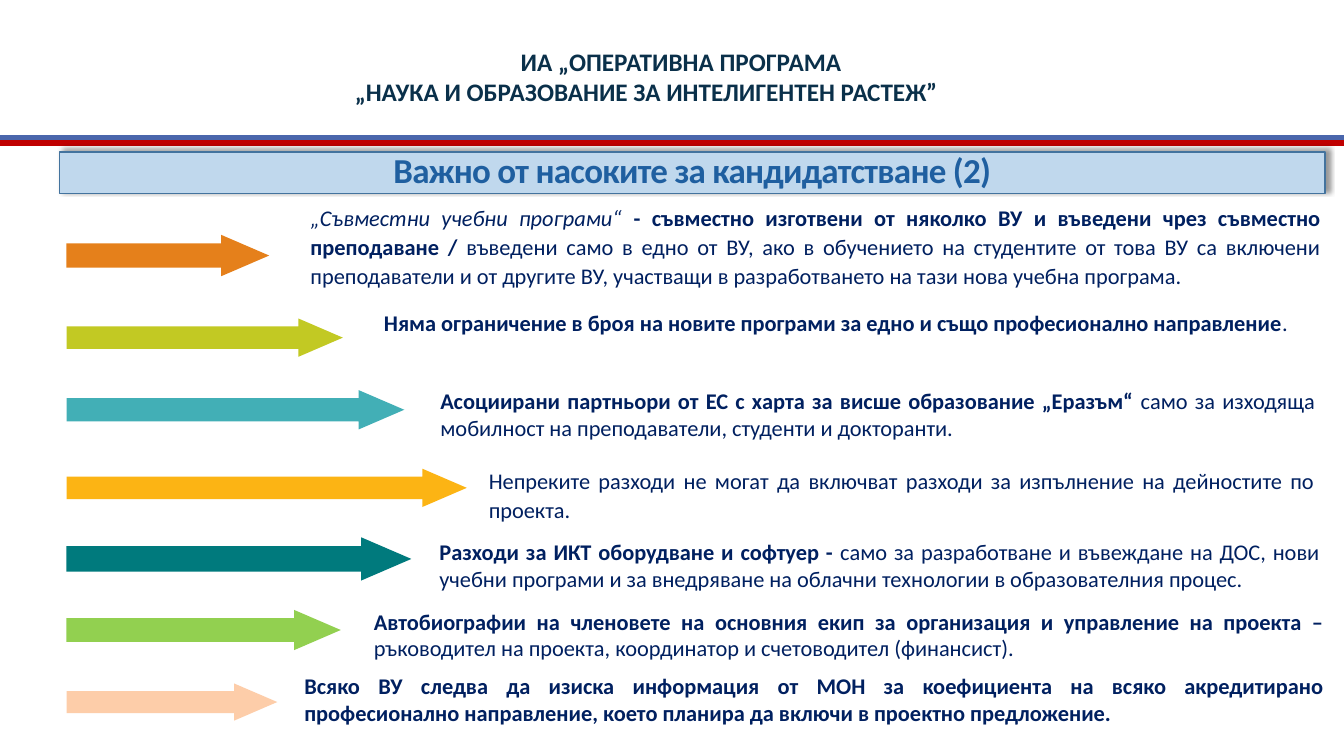
from pptx import Presentation
from pptx.dml.color import RGBColor
from pptx.enum.shapes import MSO_CONNECTOR, MSO_SHAPE
from pptx.enum.text import MSO_ANCHOR, MSO_AUTO_SIZE, PP_ALIGN
from pptx.oxml import parse_xml
from pptx.oxml.ns import nsdecls
from pptx.util import Inches, Pt

THEME = dict(
    font="Calibri", head_size=18, title_size=25, body_size=16,
    head="0A304A", title="1F5FA0", body="002060",
    bar="C0D8ED", bar_line="43739E", rule_blue="4A66AC", rule_red="C00000",
    arrows=["E5801B", "C2C923", "42AFB6", "FCB414", "007A7D", "92D050", "FDCDA9"],
)

prs = Presentation()
prs.slide_width, prs.slide_height = Inches(13.33), Inches(7.5)
s = prs.slides.add_slide(prs.slide_layouts[6])


def box(x, y, w, h):
    """Turn percent shares of the slide into lengths."""
    W, H = prs.slide_width, prs.slide_height
    return [int(share * side / 100) for share, side in zip((x, y, w, h), (W, H, W, H))]


def write(p, text, size, color, bold=False, italic=False, align=PP_ALIGN.LEFT,
          line=None, after=None, spacing=None):
    p.alignment = align
    if line:
        p.line_spacing = line
    if after:
        p.space_after = Pt(after)
    r = p.add_run()
    r.text = text
    f = r.font
    f.name, f.size, f.bold, f.italic = THEME["font"], Pt(size), bold, italic
    f.color.rgb = RGBColor.from_string(color)
    if spacing:
        r._r.get_or_add_rPr().set("spc", str(spacing))


# Double rule under the header
for y, color in [(18.27, THEME["rule_blue"]), (18.93, THEME["rule_red"])]:
    left, top, width, _ = box(0, y, 100, 0)
    ln = s.shapes.add_connector(MSO_CONNECTOR.STRAIGHT, left, top, left + width, top)
    ln.line.color.rgb = RGBColor.from_string(color)
    ln.line.width = Pt(3.75)
    ln._element.spPr.append(parse_xml(f"<a:effectLst {nsdecls('a')}/>"))

# Header
tf = s.shapes.add_textbox(*box(25.66, 5.47, 50.04, 9.47)).text_frame
tf.word_wrap = True
tf.auto_size = MSO_AUTO_SIZE.SHAPE_TO_FIT_TEXT
write(tf.paragraphs[0], "ИА „ОПЕРАТИВНА ПРОГРАМА", THEME["head_size"], THEME["head"],
      bold=True, align=PP_ALIGN.CENTER)
write(tf.add_paragraph(), "„НАУКА И ОБРАЗОВАНИЕ ЗА ИНТЕЛИГЕНТЕН РАСТЕЖ”",
      THEME["head_size"], THEME["head"], bold=True)

# Title bar
sp = s.shapes.add_shape(MSO_SHAPE.RECTANGLE, *box(4.43, 20.13, 94.15, 5.47))
sp.fill.solid()
sp.fill.fore_color.rgb = RGBColor.from_string(THEME["bar"])
sp.line.color.rgb = RGBColor.from_string(THEME["bar_line"])
sp.line.width = Pt(1)
sp._element.spPr.append(parse_xml(
    f'<a:effectLst {nsdecls("a")}><a:outerShdw blurRad="{Pt(4)}" dist="{Pt(3)}" '
    f'dir="{315 * 60000}" algn="bl" rotWithShape="0"><a:srgbClr val="000000">'
    '<a:alpha val="40000"/></a:srgbClr></a:outerShdw></a:effectLst>'))
tf = sp.text_frame
tf.margin_left = tf.margin_right = tf.margin_top = tf.margin_bottom = 0
tf.vertical_anchor = MSO_ANCHOR.MIDDLE
tf.word_wrap = True
write(tf.paragraphs[0], "Важно от насоките за кандидатстване (2)", THEME["title_size"],
      THEME["title"], bold=True, align=PP_ALIGN.CENTER, line=0.85, spacing=-50)

# Points: arrow (top, width, height), text box, paragraph format, runs
PLAIN, BOLD, ITALIC = {}, {"bold": True}, {"italic": True}
points = [
    ((31.07, 15.08, 5.47), (22.36, 26.13, 76.67, 12.93), {"line": 1.07, "after": 8}, [
        ("„Съвместни учебни програми“ ", ITALIC),
        ("- съвместно изготвени от няколко ВУ и въведени чрез съвместно преподаване / ", BOLD),
        ("въведени само в едно от ВУ, ако в обучението на студентите от това ВУ са включени "
         "преподаватели и от другите ВУ, участващи в разработването на тази нова учебна "
         "програма.", PLAIN)]),
    ((42.13, 20.56, 5.07), (27.83, 40.27, 70.74, 4.93), {}, [
        ("Няма ограничение в броя на новите програми за едно и също професионално "
         "направление", BOLD),
        (".", PLAIN)]),
    ((51.6, 25.13, 5.2), (32.03, 50.53, 66.54, 8.53), {}, [
        ("Асоциирани партньори от ЕС с харта за висше образование „Еразъм“ ", BOLD),
        ("само за изходяща мобилност на преподаватели, студенти и докторанти.", PLAIN)]),
    ((62, 29.78, 5.07), (35.63, 60.93, 62.94, 9.07), {"line": 1.07, "after": 6}, [
        ("Непреките разходи не могат да включват разходи за изпълнение на дейностите по "
         "проекта.", PLAIN)]),
    ((71.07, 25.66, 5.73), (31.96, 70.53, 66.99, 8.53), {}, [
        ("Разходи за ИКТ оборудване и софтуер - ", BOLD),
        ("само за разработване и въвеждане на ДОС, нови учебни програми и за внедряване на "
         "облачни технологии в образователния процес.", PLAIN)]),
    ((80.67, 20.41, 5.33), (27.08, 79.73, 72.17, 8.53), {}, [
        ("Автобиографии на членовете на основния екип за организация и управление на "
         "проекта – ", BOLD),
        ("ръководител на проекта, координатор и счетоводител (финансист).", PLAIN)]),
    ((90.4, 15.68, 4.93), (21.91, 88.27, 77.34, 8.53), {}, [
        ("Всяко ВУ следва да изиска информация от МОН за коефициента на всяко акредитирано "
         "професионално направление, което планира да включи в проектно предложение.", BOLD)]),
]
for color, ((top, width, height), area, layout, runs) in zip(THEME["arrows"], points):
    arrow = s.shapes.add_shape(MSO_SHAPE.RIGHT_ARROW, *box(4.95, top, width, height))
    arrow.adjustments[0], arrow.adjustments[1] = 0.59, 1.16
    arrow.shadow.inherit = False
    arrow.fill.solid()
    arrow.fill.fore_color.rgb = RGBColor.from_string(color)
    arrow.line.fill.background()

    tf = s.shapes.add_textbox(*box(*area)).text_frame
    tf.word_wrap = True
    tf.auto_size = MSO_AUTO_SIZE.SHAPE_TO_FIT_TEXT
    for text, style in runs:
        write(tf.paragraphs[0], text, THEME["body_size"], THEME["body"],
              align=PP_ALIGN.JUSTIFY, **layout, **style)

prs.save("out.pptx")
